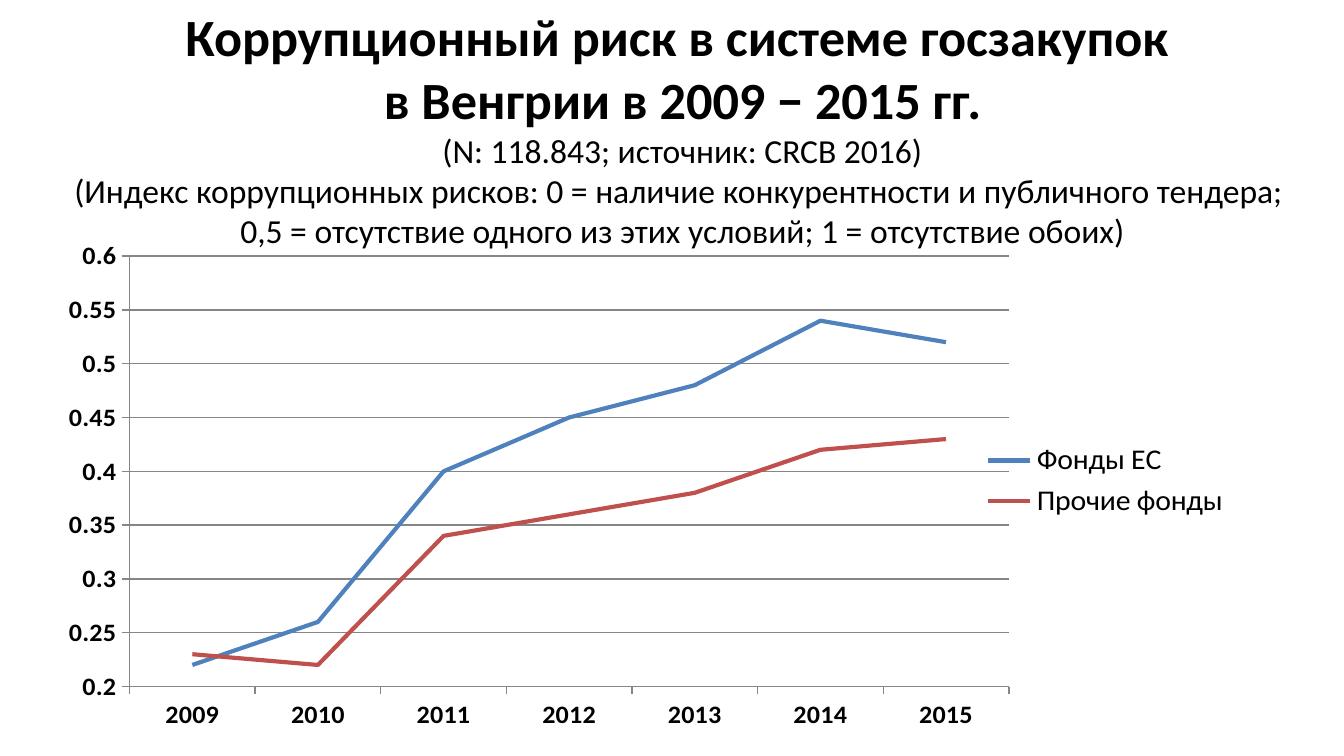
from lxml import etree
from pptx import Presentation
from pptx import util as u
from pptx.chart import data as chart_data
from pptx.dml import color
from pptx.enum import chart as ch, text
from pptx.oxml import ns

HEADING = [
    ("Коррупционный риск в системе госзакупок ", 28, True),
    ("в Венгрии в 2009 − 2015 гг.", 28, True),
    ("(N: 118.843; источник: CRCB 2016)", 18, False),
    ("(Индекс коррупционных рисков: 0 = наличие конкурентности и публичного тендера; ", 18, False),
    ("0,5 = отсутствие одного из этих условий; 1 = отсутствие обоих)", 18, False),
]
YEARS = [str(year) for year in range(2009, 2016)]
RISK = {
    "Фонды ЕС": ("4F81BD", [0.22, 0.26, 0.4, 0.45, 0.48, 0.54, 0.52]),
    "Прочие фонды": ("C0504D", [0.23, 0.22, 0.34, 0.36, 0.38, 0.42, 0.43]),
}
PLOT_AREA = {"x": 0.05, "y": 0.02, "w": 0.75, "h": 0.92}


def rgb(value):
    return color.RGBColor.from_string(value)


def format_font(font, size, bold=False, name="Calibri", ink="000000"):
    font.name = name
    font.size = u.Pt(size)
    font.bold = bold
    font.color.rgb = rgb(ink)


def write(paragraph, content, **style):
    run = paragraph.add_run()
    run.text = content
    format_font(run.font, **style)


def format_line(line, ink, width):
    line.color.rgb = rgb(ink)
    line.width = u.Pt(width)


def place_plot(chart, fractions):
    """Fix the inner plot area as fractions of the chart frame."""
    plot_area = chart.plots[0]._element.getparent()
    for old in plot_area.findall(ns.qn("c:layout")):
        plot_area.remove(old)
    layout = etree.Element(ns.qn("c:layout"))
    manual = etree.SubElement(layout, ns.qn("c:manualLayout"))
    settings = {"layoutTarget": "inner", "xMode": "edge", "yMode": "edge", **fractions}
    for tag, value in settings.items():
        etree.SubElement(manual, ns.qn(f"c:{tag}")).set("val", str(value))
    plot_area.insert(0, layout)


class Deck:
    grid_ink = "868686"

    def __init__(self, width, height):
        self.prs = Presentation()
        self.prs.slide_width, self.prs.slide_height = u.Cm(width), u.Cm(height)
        self.slide = self.prs.slides.add_slide(self.prs.slide_layouts[5])

    def title(self, lines, left, top, width, height):
        heading = self.slide.shapes.title
        heading.left, heading.top = u.Cm(left), u.Cm(top)
        heading.width, heading.height = u.Cm(width), u.Cm(height)
        frame = heading.text_frame
        frame.word_wrap = True
        frame.auto_size = text.MSO_AUTO_SIZE.SHAPE_TO_FIT_TEXT
        frame.vertical_anchor = text.MSO_ANCHOR.TOP
        for index, (content, size, bold) in enumerate(lines):
            paragraph = frame.add_paragraph() if index else frame.paragraphs[0]
            paragraph.alignment = text.PP_ALIGN.CENTER
            write(paragraph, content, size=size, bold=bold)

    def line_chart(self, categories, series, left, top, width, height):
        data = chart_data.CategoryChartData()
        data.categories = categories
        for name, (_, values) in series.items():
            data.add_series(name, values)
        chart = self.slide.shapes.add_chart(
            ch.XL_CHART_TYPE.LINE, u.Cm(left), u.Cm(top), u.Cm(width), u.Cm(height), data
        ).chart
        chart.has_title = False
        format_font(chart.font, 10)
        chart.plots[0].vary_by_categories = False
        for line in chart.plots[0].series:
            line.smooth = False
            format_line(line.format.line, series[line.name][0], 2.25)
        for axis in (chart.category_axis, chart.value_axis):
            axis.major_tick_mark = ch.XL_TICK_MARK.OUTSIDE
            format_font(axis.tick_labels.font, 14, bold=True)
            format_line(axis.format.line, self.grid_ink, 0.75)
        scale = chart.value_axis
        scale.minimum_scale, scale.maximum_scale, scale.major_unit = 0.2, 0.6, 0.05
        scale.tick_labels.number_format = "General"
        scale.tick_labels.number_format_is_linked = False
        scale.has_major_gridlines = True
        format_line(scale.major_gridlines.format.line, self.grid_ink, 0.75)
        chart.has_legend = True
        chart.legend.position = ch.XL_LEGEND_POSITION.RIGHT
        chart.legend.include_in_layout = False
        format_font(chart.legend.font, 16)
        place_plot(chart, PLOT_AREA)


def main():
    deck = Deck(25.4, 14.29)
    deck.line_chart(YEARS, RISK, left=1.3, top=4.55, width=22.2, height=9.25)
    deck.title(HEADING, left=1.1, top=-0.05, width=23.6, height=4.95)
    deck.prs.save("out.pptx")


if __name__ == "__main__":
    main()
